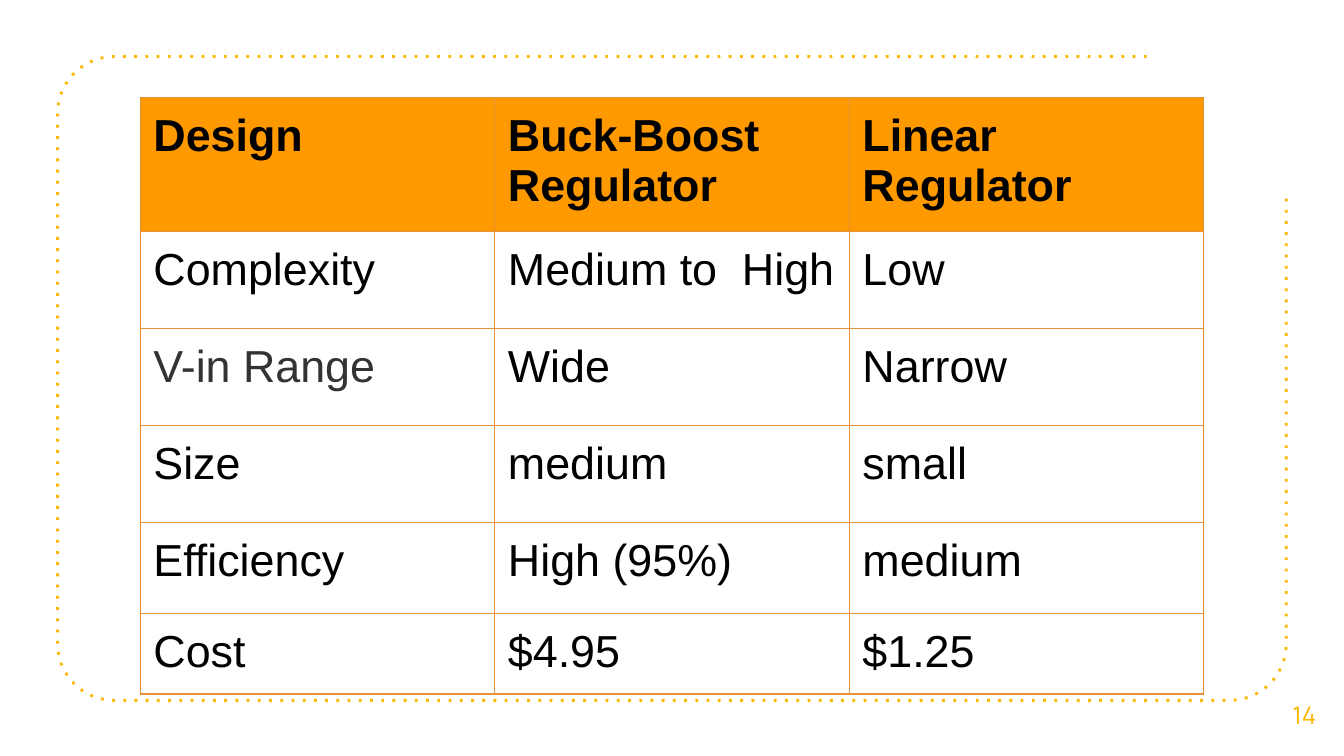
import math

import lxml.etree
import pptx
import pptx.dml.color
import pptx.enum.dml
import pptx.enum.text
import pptx.oxml.ns
import pptx.util
from pptx.util import Cm, Pt

AMBER = pptx.dml.color.RGBColor(0xFF, 0xB6, 0x00)
HEADER_ORANGE = pptx.dml.color.RGBColor(0xFF, 0x99, 0x00)
BORDER_ORANGE = pptx.dml.color.RGBColor(0xE6, 0x91, 0x38)
BLACK = pptx.dml.color.RGBColor(0x00, 0x00, 0x00)
DARK_GREY = pptx.dml.color.RGBColor(0x33, 0x33, 0x33)

INSET = Cm(0.25)
COLUMN_WIDTH = Cm(6.7)
ROW_HEIGHTS = [Cm(height) for height in (2.49, 1.83, 1.83, 1.83, 1.73, 1.47)]
COMPARISON = [
    ("Design", "Buck-Boost Regulator", "Linear Regulator"),
    ("Complexity", "Medium to  High", "Low"),
    ("V-in Range", "Wide", "Narrow"),
    ("Size", "medium", "small"),
    ("Efficiency", "High (95%)", "medium"),
    ("Cost", "$4.95", "$1.25"),
]


def arc_points(center_x, center_y, radius, start, end, steps=16):
    angles = [math.radians(start + (end - start) * step / steps) for step in range(steps + 1)]
    return [
        (center_x + radius * math.cos(angle), center_y + radius * math.sin(angle))
        for angle in angles
    ]


def add_dotted_frame(slide):
    left, top, right, bottom = Cm(1.09), Cm(1.07), Cm(24.31), Cm(13.24)
    radius = Cm(1.07)
    low_center = bottom - radius
    points = arc_points(left + radius, top + radius, radius, 270, 180)
    points += arc_points(left + radius, low_center, radius, 180, 90)
    points += arc_points(right - radius, low_center, radius, 90, 0)
    points.append((right, Cm(3.71)))
    builder = slide.shapes.build_freeform(Cm(21.67), top)
    builder.add_line_segments(points, close=False)
    frame = builder.convert_to_shape()
    frame.shadow.inherit = False
    frame.fill.background()
    frame.line.color.rgb = AMBER
    frame.line.width = Pt(1.5)
    frame.line.dash_style = pptx.enum.dml.MSO_LINE.ROUND_DOT
    for dash in frame.element.spPr.iter(pptx.oxml.ns.qn("a:prstDash")):
        dash.set("val", "dot")


def set_insets(target):
    target.margin_left = target.margin_right = INSET
    target.margin_top = target.margin_bottom = INSET


def format_text(para, font_name, size, color, bold=False):
    for span in para.runs:
        span.font.name = font_name
        span.font.size = Pt(size)
        span.font.bold = bold
        span.font.color.rgb = color


def add_page_number(slide, number):
    box = slide.shapes.add_textbox(Cm(23.9), Cm(12.75), Cm(1.5), Cm(1.52))
    frame = box.text_frame
    frame.word_wrap = True
    frame.vertical_anchor = pptx.enum.text.MSO_ANCHOR.MIDDLE
    set_insets(frame)
    frame.text = number
    para = frame.paragraphs[0]
    para.alignment = pptx.enum.text.PP_ALIGN.CENTER
    format_text(para, "Manrope", 13, AMBER)


def add_borders(cell):
    qn = pptx.oxml.ns.qn
    properties = cell._tc.get_or_add_tcPr()
    for side in ("a:lnL", "a:lnR", "a:lnT", "a:lnB"):
        line = lxml.etree.SubElement(properties, qn(side), w=str(Pt(0.75)))
        fill = lxml.etree.SubElement(line, qn("a:solidFill"))
        lxml.etree.SubElement(fill, qn("a:srgbClr"), val=str(BORDER_ORANGE))


def fill_cell(cell, text, is_header):
    set_insets(cell)
    add_borders(cell)
    if is_header:
        cell.fill.solid()
        cell.fill.fore_color.rgb = HEADER_ORANGE
    else:
        cell.fill.background()
    cell.text_frame.text = text
    color = DARK_GREY if text == "V-in Range" else BLACK
    format_text(cell.text_frame.paragraphs[0], "Arial", 24, color, is_header)


def add_comparison_table(slide):
    column_count = len(COMPARISON[0])
    table = slide.shapes.add_table(
        len(COMPARISON), column_count, Cm(2.65), Cm(1.85),
        COLUMN_WIDTH * column_count, sum(ROW_HEIGHTS),
    ).table
    table.horz_banding = False
    for column in table.columns:
        column.width = COLUMN_WIDTH
    for row_index, texts in enumerate(COMPARISON):
        table.rows[row_index].height = ROW_HEIGHTS[row_index]
        for column_index, text in enumerate(texts):
            fill_cell(table.cell(row_index, column_index), text, row_index == 0)


def main():
    deck = pptx.Presentation()
    deck.slide_width = Cm(25.4)
    deck.slide_height = Cm(14.29)
    slide = deck.slides.add_slide(deck.slide_layouts[6])
    add_dotted_frame(slide)
    add_page_number(slide, "14")
    add_comparison_table(slide)
    deck.save("out.pptx")


if __name__ == "__main__":
    main()
